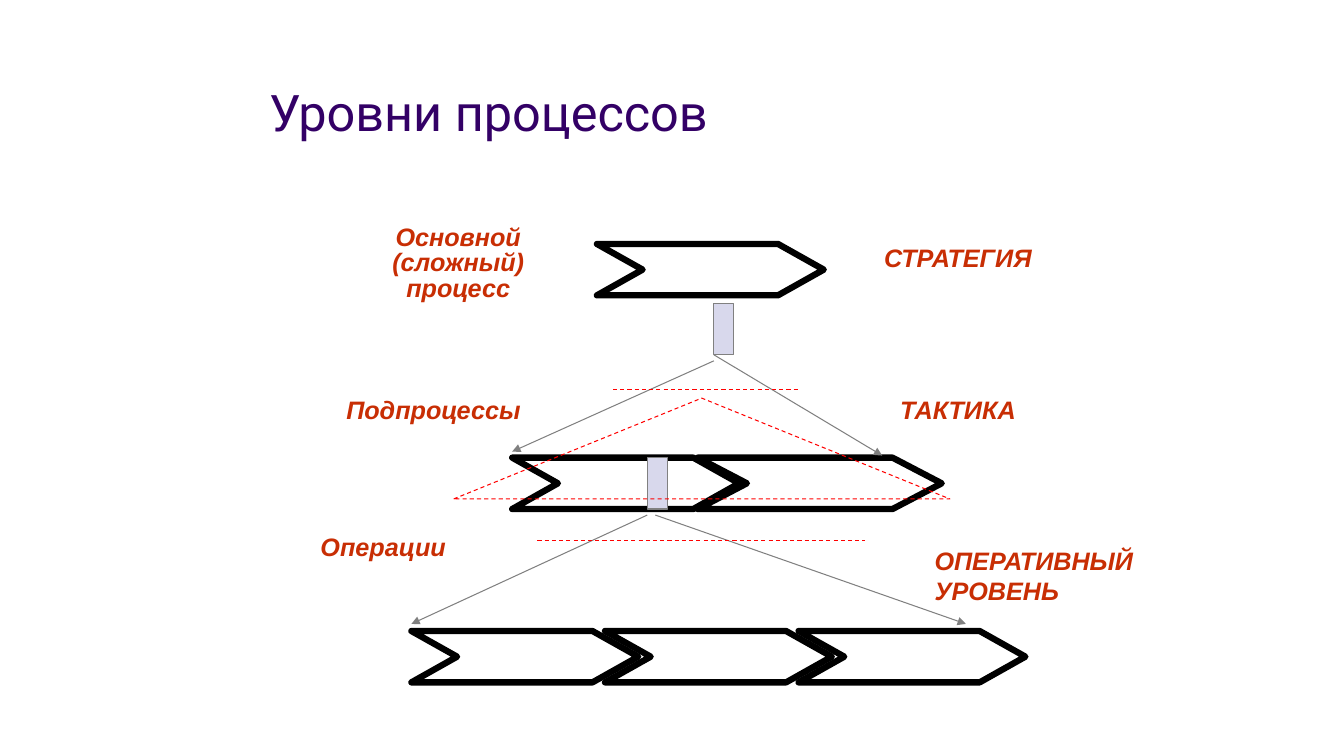
from lxml import etree
from pptx import Presentation
from pptx.dml.color import RGBColor
from pptx.enum import dml, shapes, text
from pptx.oxml import ns
from pptx.util import Inches, Pt

COLORS = {"title": "330066", "label": "C82E04", "chevron": "000000",
          "bar": "D8D8EC", "arrow": "808080", "pyramid": "FF0000"}
ROW_HEIGHT = 0.51
CHEVRON_WIDTH = 2.25


def color(name):
    return RGBColor.from_string(COLORS[name])


def style_line(line, name, width=0.75, dashed=False):
    line.color.rgb = color(name)
    line.width = Pt(width)
    if dashed:
        line.dash_style = dml.MSO_LINE.DASH


def add_outline(slide, preset, box, name, width=0.75, dashed=False):
    outline = slide.shapes.add_shape(preset, *map(Inches, box))
    outline.shadow.inherit = False
    outline.fill.background()
    style_line(outline.line, name, width, dashed)
    return outline


def add_line(slide, start, end, name, dashed=False, arrow=False):
    line = slide.shapes.add_connector(
        shapes.MSO_CONNECTOR.STRAIGHT, *map(Inches, (*start, *end)))
    style_line(line.line, name, dashed=dashed)
    if arrow:
        etree.SubElement(line.line._get_or_add_ln(), ns.qn("a:tailEnd"), type="triangle")
    etree.SubElement(line._element.spPr, ns.qn("a:effectLst"))


def add_run(paragraph, words, font, size, name, emphasis=False):
    run = paragraph.add_run()
    run.text = words
    run.font.name = font
    run.font.size = Pt(size)
    run.font.color.rgb = color(name)
    run.font.bold = run.font.italic = emphasis


def draw_title(slide, box, words):
    title = slide.shapes.title
    title.left, title.top, title.width, title.height = map(Inches, box)
    frame = title.text_frame
    frame.auto_size = text.MSO_AUTO_SIZE.NONE
    frame.vertical_anchor = text.MSO_ANCHOR.BOTTOM
    frame.paragraphs[0].alignment = text.PP_ALIGN.LEFT
    add_run(frame.paragraphs[0], words, "Roboto", 36, "title")


def draw_level(slide, left, top, widths, pitch=0):
    """A row of process chevrons; the points grow with the width."""
    for i, width in enumerate(widths):
        chevron = add_outline(slide, shapes.MSO_SHAPE.CHEVRON,
                              (left + i * pitch, top, width, ROW_HEIGHT), "chevron", 4.5)
        chevron.adjustments[0] = 0.89 * width / CHEVRON_WIDTH


def draw_breakdown(slide, left, top, arrows):
    """A bar and the arrows that open it into the next level."""
    bar = add_outline(slide, shapes.MSO_SHAPE.RECTANGLE, (left, top, 0.2, ROW_HEIGHT), "arrow")
    bar.fill.solid()
    bar.fill.fore_color.rgb = color("bar")
    for x1, y1, x2, y2 in arrows:
        add_line(slide, (left + x1, top + y1), (left + x2, top + y2), "arrow", arrow=True)


def draw_pyramid(slide, left, top, width, height):
    """Dashed triangle with a dividing line above and below."""
    add_outline(slide, shapes.MSO_SHAPE.ISOSCELES_TRIANGLE,
                (left, top, width, height), "pyramid", dashed=True)
    for x1, x2, y in ((1.58, 3.42, -0.09), (0.83, 4.08, height + 0.41)):
        add_line(slide, (left + x1, top + y), (left + x2, top + y), "pyramid", dashed=True)


def draw_label(slide, box, lines, centered=False, spacing=1.0, wrap=False):
    label = slide.shapes.add_textbox(*map(Inches, box))
    frame = label.text_frame
    frame.word_wrap = wrap
    frame.auto_size = text.MSO_AUTO_SIZE.SHAPE_TO_FIT_TEXT
    for i, words in enumerate(lines):
        paragraph = frame.add_paragraph() if i else frame.paragraphs[0]
        paragraph.alignment = text.PP_ALIGN.CENTER if centered else text.PP_ALIGN.LEFT
        paragraph.line_spacing = spacing
        add_run(paragraph, words, "Arial", 18, "label", emphasis=True)


def main():
    deck = Presentation()
    deck.slide_width, deck.slide_height = Inches(13.33), Inches(7.5)
    slide = deck.slides.add_slide(deck.slide_layouts[5])
    draw_title(slide, (2.57, 0.76, 8.67, 0.7), "Уровни процессов")

    # Three levels of processes
    draw_level(slide, 5.92, 2.42, [CHEVRON_WIDTH])
    draw_level(slide, 5.08, 4.54, [CHEVRON_WIDTH, 2.42], 1.84)
    draw_level(slide, 4.08, 6.26, [CHEVRON_WIDTH] * 3, 1.92)

    # Steps from one level to the next
    draw_breakdown(slide, 7.08, 3.01, [(0, 0.57, -2, 1.47), (0, 0.51, 1.67, 1.51)])
    draw_breakdown(slide, 6.42, 4.54, [(0, 0.57, -2.34, 1.65), (0.08, 0.57, 3.16, 1.65)])
    draw_pyramid(slide, 4.5, 3.95, 4.92, 1)

    # Kinds of process on the left
    draw_label(slide, (3.5, 2.19, 2.09, 0.87), ["Основной (сложный) процесс"],
               centered=True, spacing=0.85, wrap=True)
    draw_label(slide, (3.33, 3.86, 1.94, 0.4), ["Подпроцессы"], centered=True)
    draw_label(slide, (3.08, 5.27, 1.45, 0.36), ["Операции"], spacing=0.85)

    # Levels of management on the right
    draw_label(slide, (8.67, 2.36, 1.72, 0.4), ["СТРАТЕГИЯ"])
    draw_label(slide, (8.83, 3.86, 1.36, 0.4), ["ТАКТИКА"])
    draw_label(slide, (9.17, 5.36, 2.28, 0.7), ["ОПЕРАТИВНЫЙ", "УРОВЕНЬ"])

    deck.save("out.pptx")


if __name__ == "__main__":
    main()
